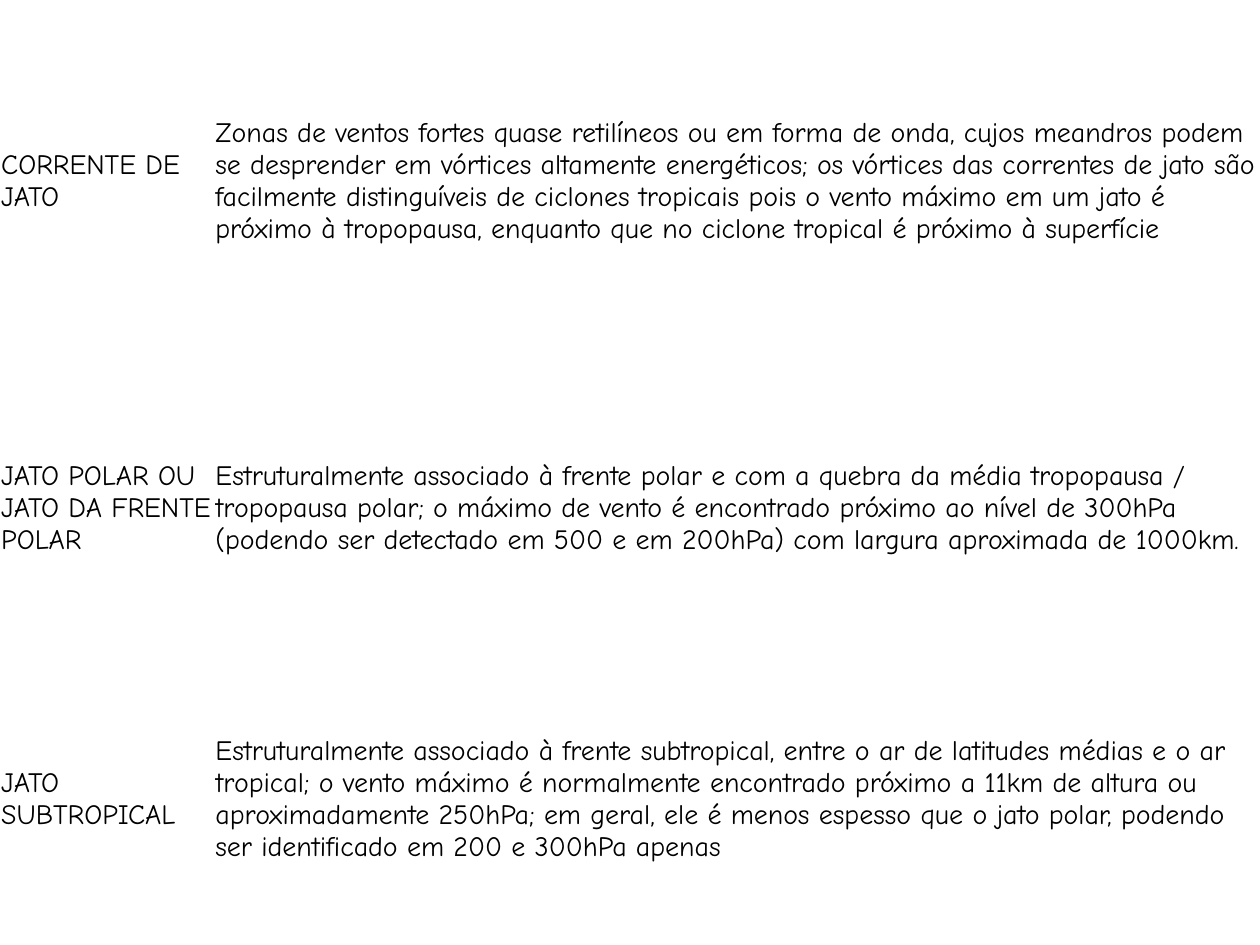
from pptx import Presentation
from pptx.dml.color import RGBColor
from pptx.enum.text import MSO_ANCHOR
from pptx.util import Inches, Pt

MIDDLE = MSO_ANCHOR.MIDDLE
BLANK_LAYOUT = 6
FONT_NAME = "Comic Neue"
FONT_SIZE = 16
CELL_MARGIN = 0.01
COLORS = {"background": "FFFFFF", "text": "000000"}

SLIDE_WIDTH, SLIDE_HEIGHT = 10, 7.5
COLUMN_WIDTHS = [1.7, 8.3]
ROW_HEIGHTS = [2.88, 2.31, 2.31]
JET_DEFINITIONS = [
    (
        "CORRENTE DE JATO",
        "Zonas de ventos fortes quase retilíneos ou em forma de onda, cujos meandros "
        "podem se desprender em vórtices altamente energéticos; os vórtices das "
        "correntes de jato são facilmente distinguíveis de ciclones tropicais pois o "
        "vento máximo em um jato é próximo à tropopausa, enquanto que no ciclone "
        "tropical é próximo à superfície",
    ),
    (
        "JATO POLAR OU JATO DA FRENTE POLAR",
        "Estruturalmente associado à frente polar e com a quebra da média tropopausa / "
        "tropopausa polar; o máximo de vento é encontrado próximo ao nível de 300hPa "
        "(podendo ser detectado em 500 e em 200hPa) com largura aproximada de 1000km.",
    ),
    (
        "JATO SUBTROPICAL",
        "Estruturalmente associado à frente subtropical, entre o ar de latitudes médias "
        "e o ar tropical; o vento máximo é normalmente encontrado próximo a 11km de "
        "altura ou aproximadamente 250hPa; em geral, ele é menos espesso que o jato "
        "polar, podendo ser identificado em 200 e 300hPa apenas",
    ),
]


def fill_cell(cell, text):
    cell.fill.solid()
    cell.fill.fore_color.rgb = RGBColor.from_string(COLORS["background"])
    cell.vertical_anchor = MIDDLE
    cell.margin_left = cell.margin_right = Inches(CELL_MARGIN)
    cell.margin_top = cell.margin_bottom = Inches(CELL_MARGIN)
    cell.text = text
    font = cell.text_frame.paragraphs[0].font
    font.name = FONT_NAME
    font.size = Pt(FONT_SIZE)
    font.color.rgb = RGBColor.from_string(COLORS["text"])


def add_definition_table(slide):
    table = slide.shapes.add_table(
        len(ROW_HEIGHTS), len(COLUMN_WIDTHS),
        Inches(0), Inches(0), Inches(SLIDE_WIDTH), Inches(SLIDE_HEIGHT),
    ).table
    table.first_row = False
    table.horz_banding = False
    for column, width in zip(table.columns, COLUMN_WIDTHS):
        column.width = Inches(width)
    for row, height, texts in zip(table.rows, ROW_HEIGHTS, JET_DEFINITIONS):
        row.height = Inches(height)
        for cell, text in zip(row.cells, texts):
            fill_cell(cell, text)


def main():
    presentation = Presentation()
    presentation.slide_width = Inches(SLIDE_WIDTH)
    presentation.slide_height = Inches(SLIDE_HEIGHT)
    slide = presentation.slides.add_slide(presentation.slide_layouts[BLANK_LAYOUT])
    add_definition_table(slide)
    presentation.save("out.pptx")


if __name__ == "__main__":
    main()
